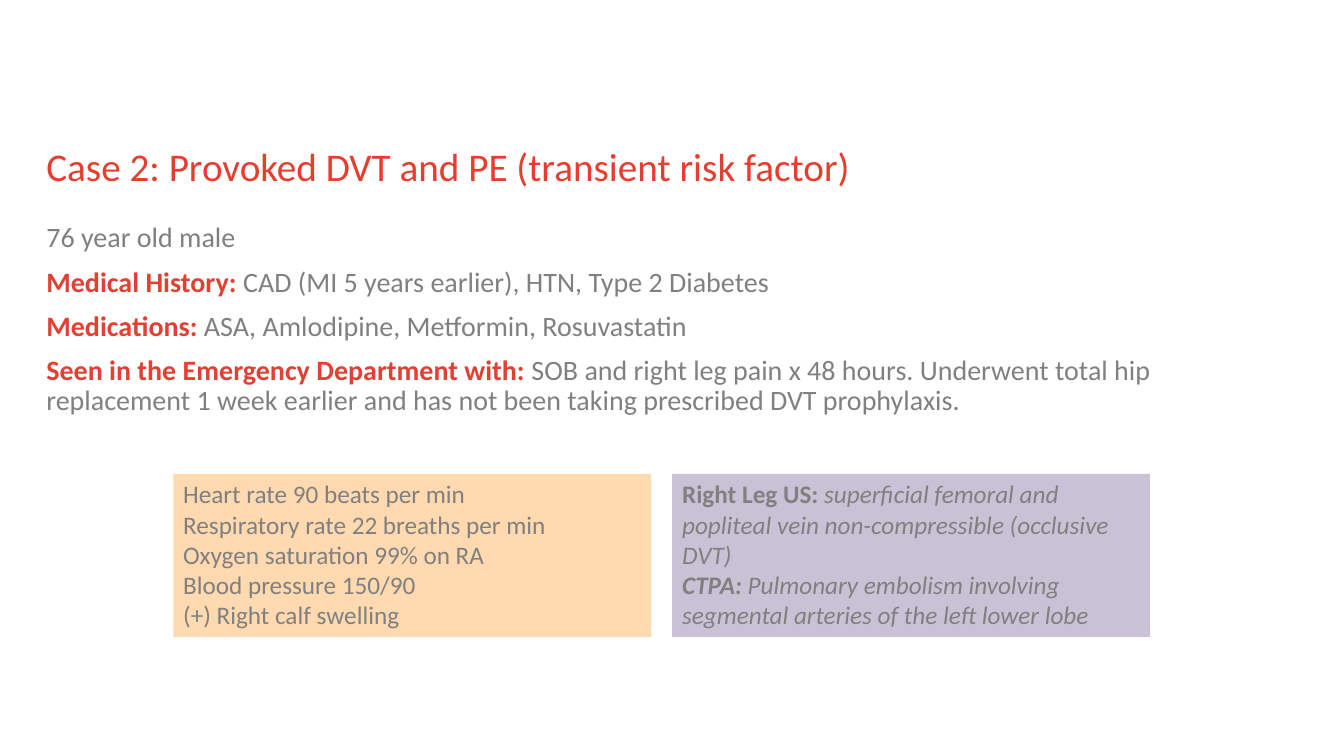
"""Build the slide on a case of provoked DVT and PE."""
from lxml import etree
from pptx import Presentation
from pptx.dml.color import RGBColor
from pptx.enum.shapes import MSO_SHAPE
from pptx.enum.text import MSO_ANCHOR, MSO_AUTO_SIZE, PP_ALIGN
from pptx.oxml.ns import qn
from pptx.util import Pt

RECT = MSO_SHAPE.RECTANGLE
TOP = MSO_ANCHOR.TOP
NO_FIT = MSO_AUTO_SIZE.NONE
LEFT = PP_ALIGN.LEFT
RED = RGBColor(0xE5, 0x3E, 0x31)
LABEL = RGBColor(0xE1, 0x40, 0x33)
GREY = RGBColor(0x80, 0x80, 0x80)
PEACH = RGBColor(0xFF, 0xD9, 0xAF)
LILAC = RGBColor(0xC9, 0xC2, 0xD6)


def place(shape, left, top, width, height):
    shape.left, shape.top = Pt(left), Pt(top)
    shape.width, shape.height = Pt(width), Pt(height)
    frame = shape.text_frame
    frame.margin_left = frame.margin_right = 0
    frame.margin_top = frame.margin_bottom = 0
    frame.word_wrap = True
    frame.auto_size = NO_FIT
    frame.vertical_anchor = TOP
    return frame


def write(para, text, size, color, bold=False, italic=False):
    run = para.add_run()
    run.text = text
    font = run.font
    font.name, font.size = "Calibri", Pt(size)
    font.bold, font.italic = bold, italic
    font.color.rgb = color


deck = Presentation()
deck.slide_width, deck.slide_height = Pt(960), Pt(540)
slide = deck.slides.add_slide(deck.slide_layouts[1])

title = place(slide.shapes.title, 33.1, 105.8, 864, 33.1).paragraphs[0]
title.alignment = LEFT
title.line_spacing = 0.9
write(title, "Case 2: Provoked DVT and PE (transient risk factor)", 28, RED)

facts = [
    ("", "76 year old male"),
    ("Medical History: ", "CAD (MI 5 years earlier), HTN, Type 2 Diabetes"),
    ("Medications: ", "ASA, Amlodipine, Metformin, Rosuvastatin"),
    ("Seen in the Emergency Department with: ",
     "SOB and right leg pain x 48 hours. Underwent total hip replacement "
     "1 week earlier and has not been taking prescribed DVT prophylaxis."),
]
body = place(slide.placeholders[1], 33.1, 159.8, 864, 311)
for i, (label, fact) in enumerate(facts):
    para = body.paragraphs[0] if i == 0 else body.add_paragraph()
    props = para._p.get_or_add_pPr()
    props.set("marL", "0")
    props.set("indent", "0")
    etree.SubElement(props, qn("a:buNone"))
    para.alignment = LEFT
    para.line_spacing = 0.9
    para.space_before = Pt(10 if i else 0)
    if label:
        write(para, label, 20, LABEL, bold=True)
    write(para, fact, 20, GREY)

signs = [
    "Heart rate 90 beats per min",
    "Respiratory rate 22 breaths per min",
    "Oxygen saturation 99% on RA",
    "Blood pressure 150/90",
    "(+) Right calf swelling",
]
scans = [
    [("Right Leg US: ", True, False),
     ("superficial femoral and popliteal vein non-compressible "
      "(occlusive DVT)", False, True)],
    [("CTPA: ", True, True),
     ("Pulmonary embolism involving segmental arteries of the left "
      "lower lobe", False, True)],
]
panels = [
    (123.8, PEACH, [[(sign, False, False)] for sign in signs]),
    (480.2, LILAC, scans),
]
for left, fill, lines in panels:
    panel = slide.shapes.add_shape(RECT, Pt(left), Pt(338.4), Pt(341.3), Pt(116.6))
    panel.shadow.inherit = False
    panel.fill.solid()
    panel.fill.fore_color.rgb = fill
    panel.line.fill.background()
    frame = panel.text_frame
    frame.word_wrap = True
    frame.vertical_anchor = TOP
    for i, parts in enumerate(lines):
        para = frame.paragraphs[0] if i == 0 else frame.add_paragraph()
        para.alignment = LEFT
        for text, bold, italic in parts:
            write(para, text, 18, GREY, bold, italic)

deck.save("out.pptx")
